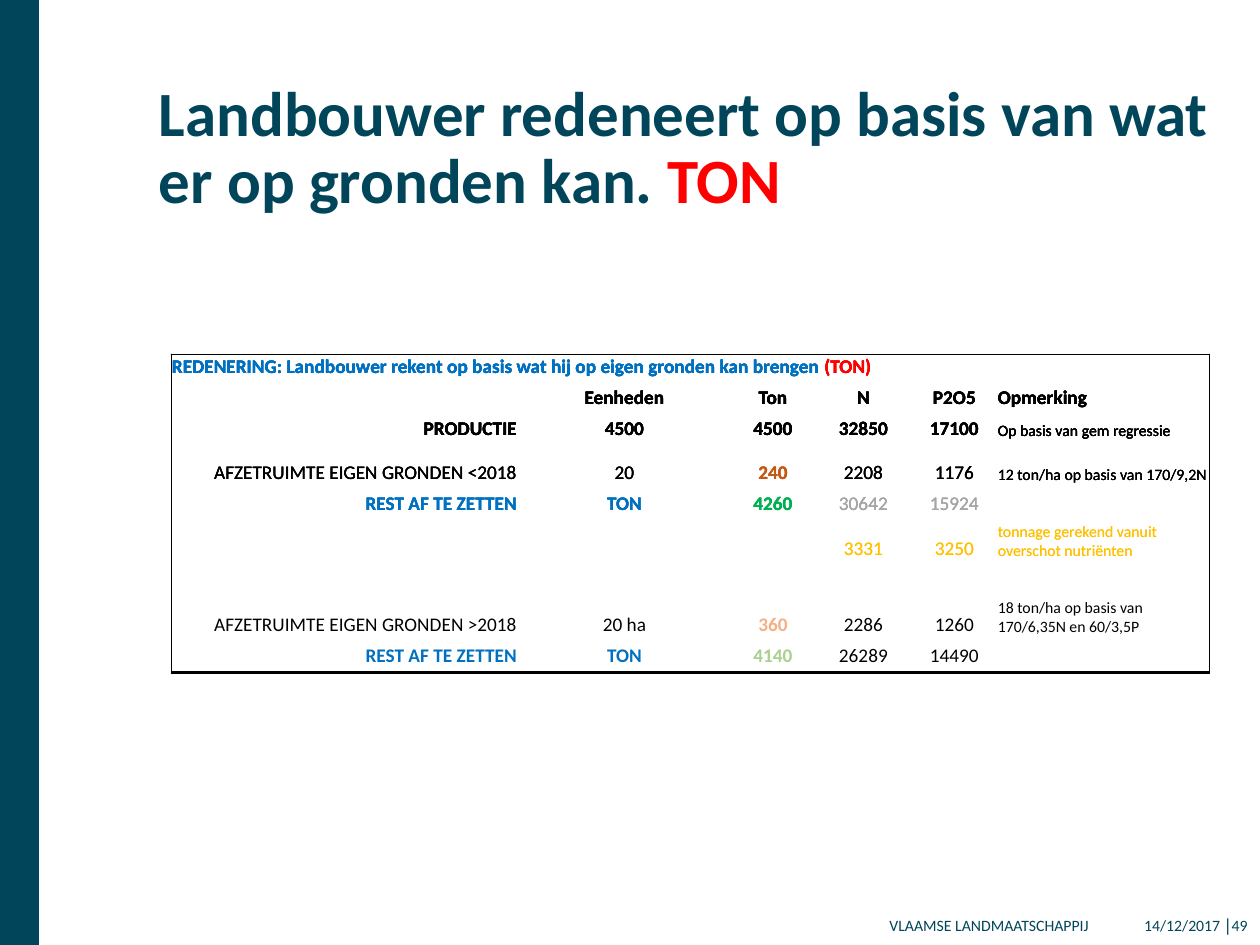
from typing import NamedTuple

import pptx
import pptx.dml.color
import pptx.enum.shapes
import pptx.enum.text
import pptx.oxml
import pptx.oxml.ns
import pptx.util

PX = 914400 / 126
FONT = "Calibri"
COLORS = {
    "teal": "004559", "red": "FF0000", "blue": "0070C0", "black": "000000",
    "rust": "C65911", "green": "00B050", "grey": "A6A6A6", "gold": "FFC000",
    "peach": "F4B084", "lime": "A9D08E",
}
ALIGN = pptx.enum.text.PP_ALIGN
ANCHOR = pptx.enum.text.MSO_ANCHOR
NO_STYLE_NO_GRID = "{2D5ABB26-0587-4C30-8999-92F81FD0307C}"


class Run(NamedTuple):
    text: str
    color: str = "black"
    bold: bool = False
    size: int = 11


class Box(NamedTuple):
    left: int
    top: int
    width: int
    height: int


def px(n: int) -> int:
    return round(n * PX)


def rgb(name: str) -> pptx.dml.color.RGBColor:
    return pptx.dml.color.RGBColor.from_string(COLORS[name])


def set_attrs(obj, values: dict) -> None:
    for name, value in values.items():
        setattr(obj, name, value)


def write(p, runs: list[Run], align) -> None:
    p.alignment = align
    for run in runs:
        r = p.add_run()
        r.text = run.text
        set_attrs(r.font, {"name": FONT, "size": pptx.util.Pt(run.size), "bold": run.bold})
        r.font.color.rgb = rgb(run.color)


def add_border(cell, side: str) -> None:
    cell._tc.get_or_add_tcPr().append(pptx.oxml.parse_xml(
        f'<a:ln{side} {pptx.oxml.ns.nsdecls("a")} w="6350"><a:solidFill>'
        f'<a:srgbClr val="{COLORS["black"]}"/></a:solidFill></a:ln{side}>'))


def add_footer(slide, box: Box, runs: list[Run]) -> None:
    tf = slide.shapes.add_textbox(*map(px, box)).text_frame
    set_attrs(tf, {"word_wrap": True, "vertical_anchor": ANCHOR.MIDDLE})
    write(tf.paragraphs[0], runs, ALIGN.RIGHT)


COL_WIDTHS = [347, 213, 84, 97, 85, 213]
COL_ALIGN = [ALIGN.RIGHT] + [ALIGN.CENTER] * 4 + [ALIGN.LEFT]
ROW_HEIGHTS = [31, 31, 31, 44, 31, 44, 31, 44, 31]
TABLE_BOX = Box(171, 354, sum(COL_WIDTHS), sum(ROW_HEIGHTS))
HEADING = [
    Run("REDENERING: Landbouwer rekent op basis wat hij op eigen gronden kan brengen ", "blue", True),
    Run("(TON)", "red", True),
]


def balance_row(ton: Run, n: Run, p2o5: Run) -> list:
    return [Run("REST AF TE ZETTEN", "blue", True), Run("TON", "blue", True), ton, n, p2o5, None]


BODY = [
    [None] + [Run(t, bold=True) for t in ("Eenheden", "Ton", "N", "P2O5", "Opmerking")],
    [Run(t, bold=True) for t in ("PRODUCTIE", "4500", "4500", "32850", "17100")]
    + [Run("Op basis van gem regressie", size=9)],
    [Run("AFZETRUIMTE EIGEN GRONDEN <2018"), Run("20"), Run("240", "rust", True),
     Run("2208"), Run("1176"), Run("12 ton/ha op basis van 170/9,2N", size=9)],
    balance_row(Run("4260", "green", True), Run("30642", "grey"), Run("15924", "grey")),
    [None, None, None, Run("3331", "gold"), Run("3250", "gold"),
     Run("tonnage gerekend vanuit overschot nutriënten", "gold", size=9)],
    [None] * 6,
    [Run("AFZETRUIMTE EIGEN GRONDEN >2018"), Run("20 ha"), Run("360", "peach", True),
     Run("2286"), Run("1260"), Run("18 ton/ha op basis van 170/6,35N en 60/3,5P", size=9)],
    balance_row(Run("4140", "lime", True), Run("26289"), Run("14490")),
]
# Each build stage shows the table filled down to this many rows.
STAGES = [3, 5, 6, 9]


def format_cell(cell, row: int, col: int) -> None:
    set_attrs(cell, {
        "margin_left": px(1), "margin_top": px(1), "margin_right": px(1),
        "margin_bottom": px(6), "vertical_anchor": ANCHOR.BOTTOM,
    })
    edges = {"L": col == 0, "R": col == len(COL_WIDTHS) - 1,
             "T": row == 0, "B": row == len(ROW_HEIGHTS) - 1}
    for side, on_edge in edges.items():
        if on_edge:
            add_border(cell, side)
    cell.fill.background()


def set_empty_size(p, size: int) -> None:
    """Keep a row with empty cells as low as its neighbours."""
    p._p.append(pptx.oxml.parse_xml(
        f'<a:endParaRPr {pptx.oxml.ns.nsdecls("a")} sz="{size * 100}"/>'))


def add_stage(slide, filled: int) -> None:
    frame = slide.shapes.add_table(
        len(ROW_HEIGHTS), len(COL_WIDTHS), *map(px, TABLE_BOX))
    table = frame.table
    set_attrs(table, {"first_row": False, "horz_banding": False})
    table._tbl.tblPr.find(pptx.oxml.ns.qn("a:tableStyleId")).text = NO_STYLE_NO_GRID
    for column, width in zip(table.columns, COL_WIDTHS):
        column.width = px(width)
    for row, height in zip(table.rows, ROW_HEIGHTS):
        row.height = px(height)
    table.cell(0, 0).merge(table.cell(0, 3))
    for i in range(len(ROW_HEIGHTS)):
        for j, align in enumerate(COL_ALIGN):
            cell = table.cell(i, j)
            format_cell(cell, i, j)
            p = cell.text_frame.paragraphs[0]
            run = BODY[i - 1][j] if 0 < i < filled else None
            if (i, j) == (0, 0):
                write(p, HEADING, ALIGN.LEFT)
            elif run:
                write(p, [run], align)
            else:
                set_empty_size(p, 11)


def add_title(slide) -> None:
    sp = slide.shapes.title
    set_attrs(sp, dict(zip(Box._fields, map(px, Box(159, 83, 1062, 154)))))
    tf = sp.text_frame
    set_attrs(tf, {
        "margin_left": 0, "margin_top": 0, "margin_right": 0, "margin_bottom": 0,
        "word_wrap": True, "vertical_anchor": ANCHOR.TOP,
        "auto_size": pptx.enum.text.MSO_AUTO_SIZE.NONE,
    })
    p = tf.paragraphs[0]
    p.line_spacing = pptx.util.Pt(38)
    write(p, [
        Run("Landbouwer redeneert op basis van wat er op gronden kan. ", "teal", True, 36),
        Run("TON", "red", True, 36),
    ], ALIGN.LEFT)


def add_side_bar(slide) -> None:
    sp = slide.shapes.add_shape(
        pptx.enum.shapes.MSO_SHAPE.RECTANGLE, *map(px, Box(0, 0, 39, 945)))
    sp.shadow.inherit = False
    sp.fill.solid()
    sp.fill.fore_color.rgb = rgb("teal")
    sp.line.fill.background()


def main() -> None:
    prs = pptx.Presentation()
    set_attrs(prs, {"slide_width": px(1260), "slide_height": px(945)})
    slide = prs.slides.add_slide(prs.slide_layouts.get_by_name("Title Only"))
    add_side_bar(slide)
    add_title(slide)
    add_footer(slide, Box(450, 905, 651, 40), [Run("VLAAMSE LANDMAATSCHAPPIJ", "teal", size=9)])
    add_footer(slide, Box(1102, 905, 158, 40), [
        Run("14/12/2017 ", "teal", size=9), Run("│", "teal", True, 9), Run("49", "teal", size=9)])
    for filled in STAGES:
        add_stage(slide, filled)
    prs.save("out.pptx")


if __name__ == "__main__":
    main()
